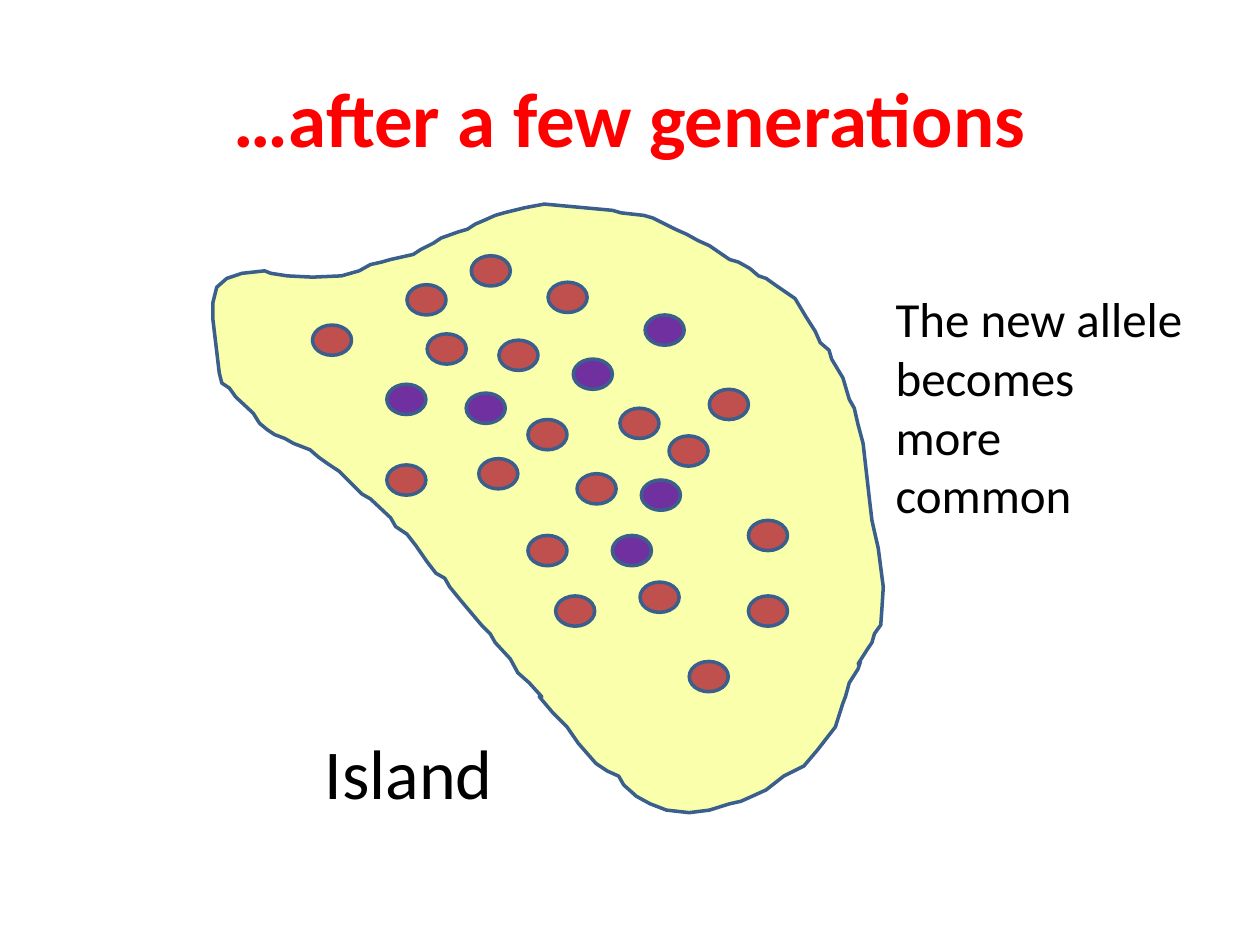
import pptx
import pptx.util
import pptx.dml.color
import pptx.enum.shapes
import pptx.enum.text

Inches, Pt = pptx.util.Inches, pptx.util.Pt
RGB = pptx.dml.color.RGBColor.from_string
ALIGN = pptx.enum.text.PP_ALIGN
ANCHOR = pptx.enum.text.MSO_ANCHOR

THEME = {
    "font": "Calibri",
    "title": "FF0000", "text": "000000",
    "land": "F9FFAB", "edge": "3A5F8C", "old": "C0504D", "new": "7030A0",
    "title_size": 44, "label_size": 40, "note_size": 28, "edge_width": 2,
}

# words, box, size, colour, bold, align, anchor
TEXTS = [
    ("…after a few generations", (0.5, 0.3, 9, 1.25), "title_size", "title",
     True, ALIGN.CENTER, ANCHOR.MIDDLE),
    ("Island", (2.48, 5.74, 2.44, 0.77), "label_size", "text",
     False, ALIGN.LEFT, ANCHOR.TOP),
    ("The new allele becomes more common", (7.01, 2.24, 2.48, 1.99),
     "note_size", "text", False, ALIGN.LEFT, ANCHOR.TOP),
]

# shoreline, clockwise from the north-west cape
COAST = [
    (2.15, 2.17), (2.28, 2.19), (2.48, 2.2), (2.71, 2.19), (2.85, 2.15),
    (2.94, 2.1), (3.03, 2.08), (3.1, 2.06), (3.28, 2.02), (3.34, 1.98),
    (3.44, 1.93), (3.5, 1.89), (3.64, 1.84), (3.71, 1.82), (3.77, 1.78),
    (3.84, 1.75), (3.93, 1.71), (4, 1.69), (4.16, 1.65), (4.32, 1.62),
    (4.86, 1.67), (4.93, 1.69), (5.11, 1.71), (5.18, 1.73), (5.36, 1.82),
    (5.45, 1.86), (5.54, 1.91), (5.63, 1.95), (5.79, 2.06), (5.86, 2.08),
    (5.95, 2.13), (6.02, 2.19), (6.08, 2.21), (6.15, 2.26), (6.31, 2.37),
    (6.4, 2.52), (6.47, 2.63), (6.51, 2.72), (6.58, 2.78), (6.6, 2.85),
    (6.69, 3), (6.74, 3.17), (6.78, 3.24), (6.81, 3.37), (6.85, 3.52),
    (6.9, 3.96), (6.92, 4.13), (6.94, 4.22), (6.97, 4.35), (7.01, 4.66),
    (7, 4.82), (6.99, 4.96), (6.94, 5.03), (6.92, 5.1), (6.88, 5.16),
    (6.81, 5.27), (6.83, 5.25), (6.81, 5.31), (6.74, 5.42), (6.71, 5.53),
    (6.69, 5.58), (6.63, 5.77), (6.49, 5.95), (6.38, 6.08), (6.22, 6.16),
    (6.08, 6.27), (5.97, 6.32), (5.88, 6.36), (5.79, 6.38), (5.63, 6.43),
    (5.47, 6.45), (5.29, 6.43), (5.16, 6.38), (5.05, 6.32), (4.95, 6.23),
    (4.91, 6.16), (4.82, 6.12), (4.73, 6.06), (4.59, 5.9), (4.5, 5.77),
    (4.39, 5.66), (4.28, 5.53), (4.3, 5.53), (4.2, 5.42), (4.11, 5.34),
    (4.05, 5.23), (3.93, 5.1), (3.89, 5.03), (3.82, 4.96), (3.66, 4.77),
    (3.57, 4.66), (3.53, 4.59), (3.46, 4.55), (3.39, 4.46), (3.3, 4.33),
    (3.23, 4.24), (3.14, 4.18), (3.1, 4.11), (2.94, 3.96), (2.87, 3.92),
    (2.69, 3.74), (2.6, 3.68), (2.53, 3.63), (2.46, 3.57), (2.33, 3.52),
    (2.26, 3.48), (2.18, 3.45), (2.12, 3.41), (2.06, 3.36), (2.01, 3.28),
    (1.87, 3.15), (1.82, 3.08), (1.76, 3.04), (1.74, 2.96), (1.69, 2.54),
    (1.69, 2.4), (1.72, 2.28), (1.8, 2.21), (1.92, 2.17), (2.1, 2.15),
]

OVAL = (0.31, 0.24)
ALLELES = {
    "old": [
        (4.35, 2.24), (3.39, 2.65), (4.19, 3.33), (5.63, 3.09), (3.8, 3.64),
        (5.94, 4.13), (4.19, 4.25), (5.08, 4.62), (2.48, 2.58), (3.74, 2.03),
        (3.23, 2.26), (4.58, 3.76), (4.92, 3.24), (4.41, 4.73), (3.96, 2.7),
        (5.31, 3.46), (3.07, 3.69), (5.94, 4.73), (5.47, 5.25),
    ],
    "new": [
        (3.07, 3.05), (3.7, 3.12), (4.55, 2.85), (5.12, 2.5), (5.09, 3.81),
        (4.86, 4.25),
    ],
}


def assign(item, values):
    for name, value in values.items():
        setattr(item, name, value)


def paint(shape, fill):
    shape.shadow.inherit = False
    shape.fill.solid()
    shape.fill.fore_color.rgb = RGB(THEME[fill])
    shape.line.color.rgb = RGB(THEME["edge"])
    shape.line.width = Pt(THEME["edge_width"])


def write(slide, words, box, size, color, bold, align, anchor):
    frame = slide.shapes.add_textbox(*map(Inches, box)).text_frame
    assign(frame, {"word_wrap": True, "vertical_anchor": anchor})
    line = frame.paragraphs[0]
    line.alignment = align
    run = line.add_run()
    run.text = words
    assign(run.font, {"name": THEME["font"], "size": Pt(THEME[size]),
                      "bold": bold})
    run.font.color.rgb = RGB(THEME[color])


def draw(slide):
    """Group the island with the alleles that live on it."""
    group = slide.shapes.add_group_shape().shapes
    start, *rest = [tuple(map(Inches, point)) for point in COAST]
    coast = group.build_freeform(*start)
    coast.add_line_segments(rest, close=True)
    paint(coast.convert_to_shape(), "land")
    for kind, spots in ALLELES.items():
        for spot in spots:
            oval = group.add_shape(pptx.enum.shapes.MSO_SHAPE.OVAL,
                                   *map(Inches, spot + OVAL))
            paint(oval, kind)


def main():
    deck = pptx.Presentation()
    assign(deck, {"slide_width": Inches(10), "slide_height": Inches(7.5)})
    slide = deck.slides.add_slide(deck.slide_layouts[6])
    draw(slide)
    for text in TEXTS:
        write(slide, *text)
    deck.save("out.pptx")


if __name__ == "__main__":
    main()
